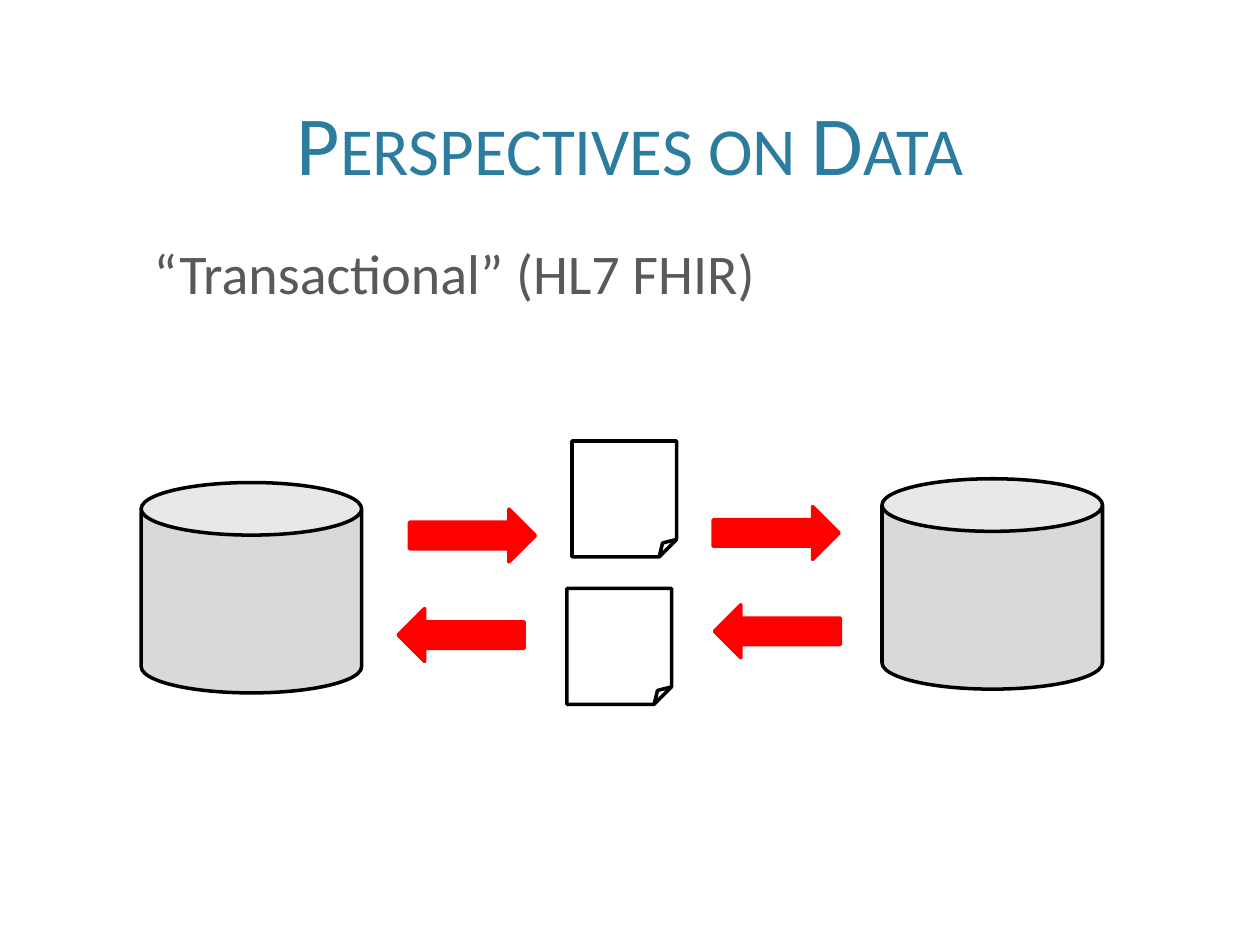
from pptx import Presentation
from pptx.dml.color import RGBColor
from pptx.enum.shapes import MSO_SHAPE as Kind
from pptx.enum.text import MSO_ANCHOR as Anchor, MSO_AUTO_SIZE as Fit, PP_ALIGN as Align
from pptx.oxml.ns import qn
from pptx.util import Inches, Pt

BLUE = RGBColor(0x2C, 0x7C, 0x9F)
GREY = RGBColor(0x59, 0x59, 0x59)
SILVER = RGBColor(0xD9, 0xD9, 0xD9)
RED = RGBColor(0xFF, 0x00, 0x00)
BLACK = RGBColor(0x00, 0x00, 0x00)


def place(shape, left, top, width, height):
    """Set the position and size of a shape in inches."""
    shape.left, shape.top = Inches(left), Inches(top)
    shape.width, shape.height = Inches(width), Inches(height)


def write(shape, text, size, color, align):
    """Put one formatted line of text in a shape."""
    frame = shape.text_frame
    frame.text = text
    frame.word_wrap = True
    para = frame.paragraphs[0]
    para.alignment = align
    font = para.runs[0].font
    font.name, font.size = "Calibri", Pt(size)
    font.color.rgb = color


def add_title(slide, text):
    """Fill the title placeholder with small capitals."""
    title = slide.shapes.title
    place(title, 0.6, 0.12, 8.8, 1.46)
    write(title, text, 48, BLUE, Align.CENTER)
    title.text_frame.vertical_anchor = Anchor.BOTTOM
    title.text_frame.auto_size = Fit.NONE
    for props in title.element.iter(qn("a:rPr")):
        props.set("cap", "small")


def add_label(slide, text):
    """Add the subtitle text box."""
    box = slide.shapes.add_textbox(0, 0, 0, 0)
    place(box, 1.12, 1.84, 5.92, 0.64)
    write(box, text, 32, GREY, Align.LEFT)
    box.text_frame.auto_size = Fit.SHAPE_TO_FIT_TEXT


def add_form(slide, kind, left, top, width, height, line, fill=None):
    """Add an outlined preset shape, filled when a colour is given."""
    form = slide.shapes.add_shape(kind, 0, 0, 0, 0)
    place(form, left, top, width, height)
    form.shadow.inherit = False
    form.line.color.rgb = line
    form.line.width = Pt(2)
    if fill is None:
        form.fill.background()
    else:
        form.fill.solid()
        form.fill.fore_color.rgb = fill
    return form


def add_store(slide, left, top):
    """Add a data store cylinder."""
    add_form(slide, Kind.CAN, left, top, 1.75, 1.67, BLACK, SILVER)


def add_page(slide, left, top):
    """Add a message page with a folded corner."""
    add_form(slide, Kind.FOLDED_CORNER, left, top, 0.83, 0.92, BLACK)


def add_arrow(slide, left, top, turn=0):
    """Add a red block arrow turned by the given degrees."""
    arrow = add_form(slide, Kind.RIGHT_ARROW, left, top, 1, 0.42, RED, RED)
    arrow.rotation = turn


def main():
    """Build the slide and save it."""
    deck = Presentation()
    deck.slide_width, deck.slide_height = Inches(10), Inches(7.5)
    slide = deck.slides.add_slide(deck.slide_layouts[5])
    add_title(slide, "Perspectives on Data")
    add_label(slide, "“Transactional” (HL7 FHIR)")
    for left, top in ((1.12, 3.83), (7, 3.8)):
        add_store(slide, left, top)
    for left, top in ((4.54, 3.5), (4.5, 4.67)):
        add_page(slide, left, top)
    for left, top in ((3.25, 4.04), (5.66, 4.02)):
        add_arrow(slide, left, top)
    for left, top in ((5.67, 4.8), (3.16, 4.83)):
        add_arrow(slide, left, top, 180)
    deck.save("out.pptx")


if __name__ == "__main__":
    main()
